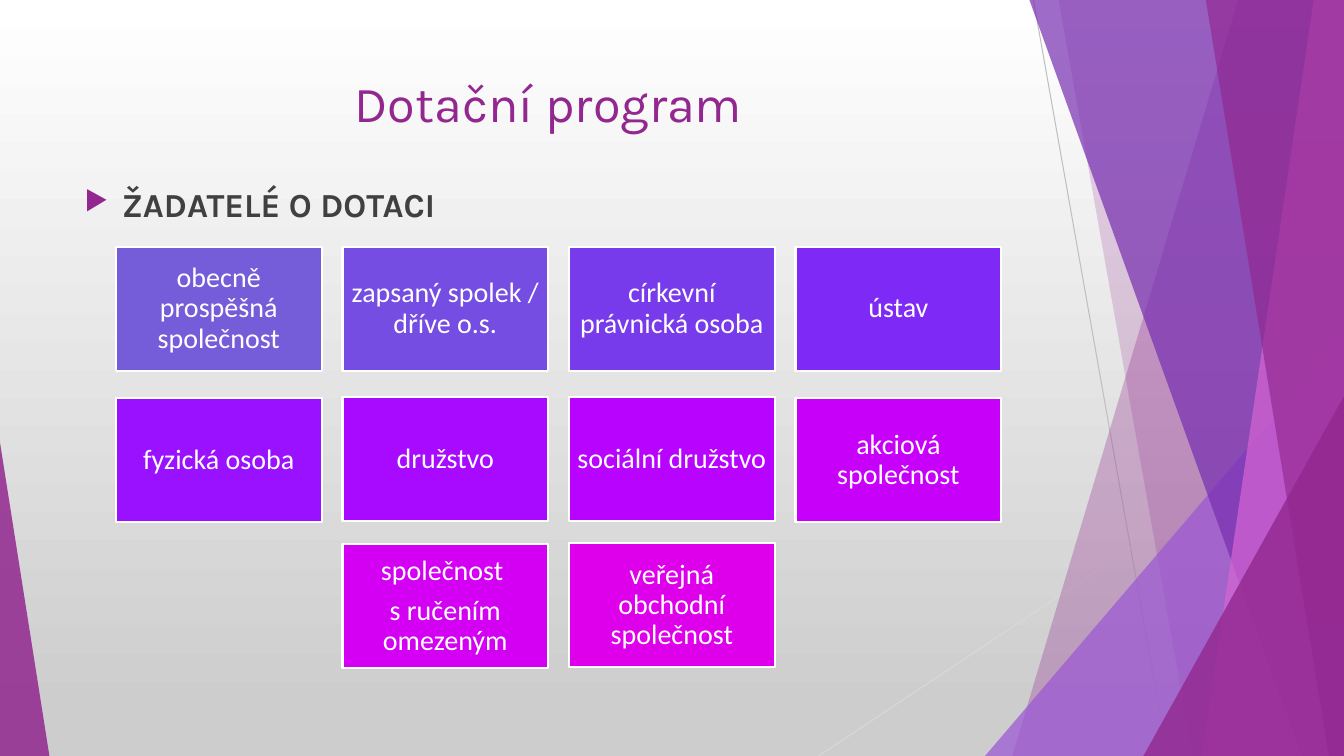
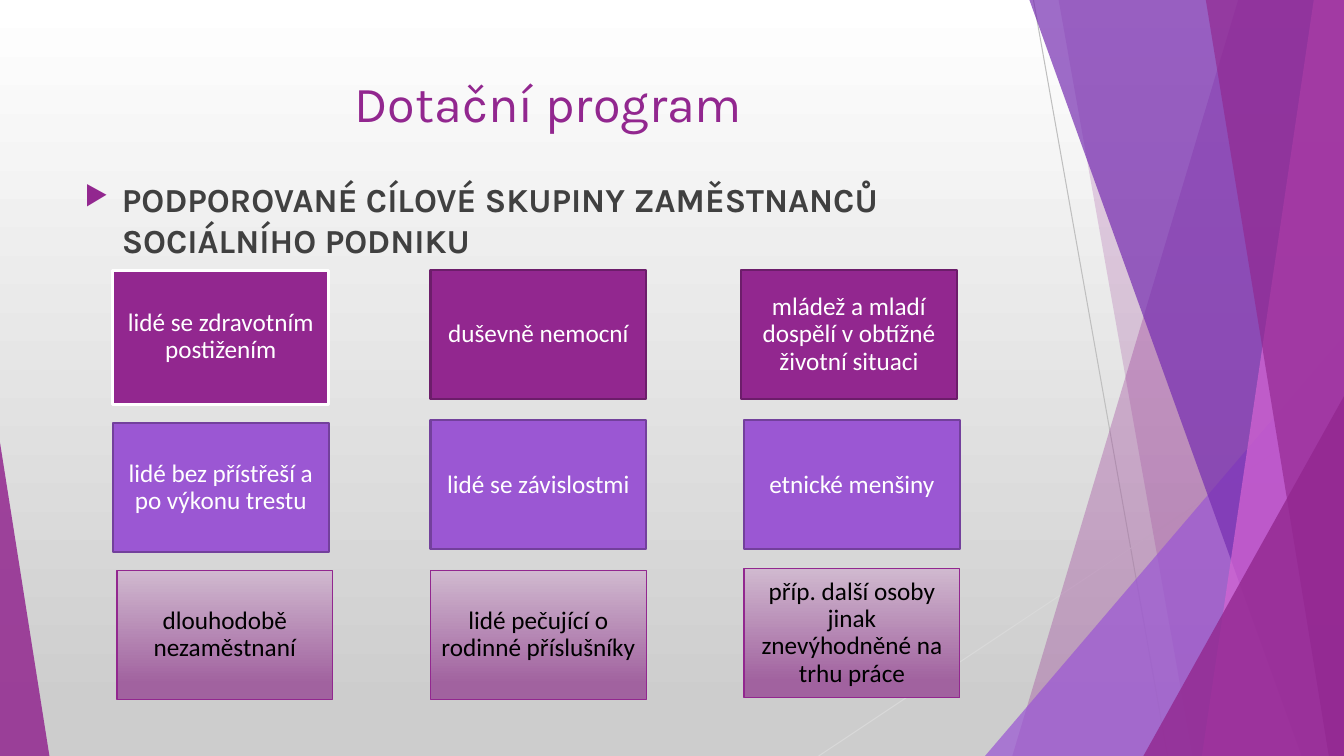
from lxml import etree
from pptx import Presentation
from pptx.dml.color import RGBColor
from pptx.enum.shapes import MSO_CONNECTOR, MSO_SHAPE
from pptx.enum.text import MSO_ANCHOR, PP_ALIGN
from pptx.oxml.ns import qn
from pptx.util import Inches, Pt

STRAIGHT = MSO_CONNECTOR.STRAIGHT
TRIANGLE = MSO_SHAPE.ISOSCELES_TRIANGLE
RECTANGLE = MSO_SHAPE.RECTANGLE
CENTER = PP_ALIGN.CENTER
MIDDLE = MSO_ANCHOR.MIDDLE

WIDTH, HEIGHT = 13.33, 7.5
TEXT_LEFT, TEXT_WIDTH = 0.74, 9.4
BULLET_INDENT = 0.37

PLUM, VIOLET, INDIGO, PINK = "92278F", "9B57D3", "762EB1", "D665D3"
DARK_PLUM, DARK_VIOLET = "6C1D6A", "73409C"
WHITE, BLACK, TEXT_GRAY = "FFFFFF", "000000", "404040"
PAGE_GRADIENT = ((0, WHITE), (0.94, "CDCDCD"))
BOX_GRADIENT = ((0, "D0B9CF"), (0.88, "A1629F"))

# Thin lines: start, end, colour
RAYS = [
    ((10.25, 0), (11.58, HEIGHT), "BFBFBF"),
    ((WIDTH, 4.03), (8.12, HEIGHT), "D9D9D9"),
]
# Bands run from a slanted left side to the right edge: top x, bottom x, bottom right x.
# Triangles: left, top, width, apex as a share of the width.
FACETS = [
    ("band", (12.28, 10.04, WIDTH), PLUM, 30),
    ("band", (10.5, 11.83, WIDTH), PLUM, 20),
    ("triangle", (9.77, 3.33, 3.56, 1), VIOLET, 72),
    ("band", (10.21, 12.91, WIDTH), INDIGO, 70),
    ("band", (13.03, 11.92, WIDTH), PINK, 70),
    ("band", (11.96, 13.18, WIDTH), PLUM, 65),
    ("triangle", (11.34, 3.93, 1.99, 1), PLUM, 80),
    ("triangle", (0, 4.39, 0.49, 0), PLUM, 85),
]

# Applicants: column, top, fill, paragraphs
APPLICANTS = [
    (0, 2.45, "755DD9", ["obecně prospěšná společnost"]),
    (1, 2.45, "754DE2", ["zapsaný spolek / dříve o.s."]),
    (2, 2.45, "783BEC", ["církevní právnická osoba"]),
    (3, 2.45, "7F29F6", ["ústav"]),
    (0, 3.95, "9911FF", ["fyzická osoba"]),
    (1, 3.94, "A80AFF", ["družstvo"]),
    (2, 3.94, "B803FF", ["sociální družstvo"]),
    (3, 3.95, "C700FA", ["akciová společnost"]),
    (1, 5.4, "D300F3", ["společnost ", "s ručením omezeným"]),
    (2, 5.39, "DE00EB", ["veřejná obchodní společnost"]),
]
APPLICANT_LEFT, APPLICANT_PITCH = 1.15, (7.89 - 1.15) / 3
applicant_boxes = [
    ((APPLICANT_LEFT + column * APPLICANT_PITCH, top, 2.04, 1.23),
     (fill, WHITE, 1.5, WHITE), lines)
    for column, top, fill, lines in APPLICANTS
]

# Box styles: fill, outline, outline width, text colour
FRAMED = (PLUM, WHITE, 2, WHITE)
FIRST_ROW = (PLUM, DARK_PLUM, 1.5, WHITE)
SECOND_ROW = (VIOLET, DARK_VIOLET, 1.5, WHITE)
THIRD_ROW = (BOX_GRADIENT, PLUM, 1, BLACK)
group_boxes = [
    ((1.12, 2.68, 2.14, 1.33), FRAMED, ["lidé se zdravotním postižením"]),
    ((4.27, 2.68, 2.14, 1.28), FIRST_ROW, ["duševně nemocní"]),
    ((7.35, 2.68, 2.14, 1.28), FIRST_ROW,
     ["mládež a mladí dospělí v obtížné životní situaci"]),
    ((1.12, 4.2, 2.14, 1.28), SECOND_ROW, ["lidé bez přístřeší a po výkonu trestu"]),
    ((4.27, 4.17, 2.14, 1.28), SECOND_ROW, ["lidé se závislostmi"]),
    ((7.38, 4.17, 2.14, 1.28), SECOND_ROW, ["etnické menšiny"]),
    ((1.16, 5.66, 2.14, 1.28), THIRD_ROW, ["dlouhodobě nezaměstnaní"]),
    ((4.27, 5.66, 2.14, 1.28), THIRD_ROW, ["lidé pečující o rodinné příslušníky"]),
    ((7.38, 5.64, 2.14, 1.28), THIRD_ROW,
     ["příp. další osoby jinak znevýhodněné na trhu práce"]),
]

# Slides: heading, heading top, boxes, box text size, box inset
SLIDES = [
    ("ŽADATELÉ O DOTACI", 1.78, applicant_boxes, 20, 0.08),
    ("PODPOROVANÉ CÍLOVÉ SKUPINY ZAMĚSTNANCŮ SOCIÁLNÍHO PODNIKU", 1.73,
     group_boxes, 18, 0.07),
]


def paint(fill, paint_color):
    """Fill with one hex colour, or top to bottom with (position, hex) stops."""
    if isinstance(paint_color, str):
        fill.solid()
        fill.fore_color.rgb = RGBColor.from_string(paint_color)
        return
    fill.gradient()
    fill.gradient_angle = 270
    for stop, (position, hex_color) in zip(fill.gradient_stops, paint_color):
        stop.position = position
        stop.color.rgb = RGBColor.from_string(hex_color)


def add_run(paragraph, text, font_name, size, hex_color, bold=False):
    run = paragraph.add_run()
    run.text = text
    run.font.name = font_name
    run.font.size = Pt(size)
    run.font.bold = bold
    paint(run.font.fill, hex_color)


presentation = Presentation()
presentation.slide_width = Inches(WIDTH)
presentation.slide_height = Inches(HEIGHT)
blank_layout = presentation.slide_layouts[6]

for heading, heading_top, boxes, text_size, inset in SLIDES:
    slide = presentation.slides.add_slide(blank_layout)
    shapes = slide.shapes
    paint(slide.background.fill, PAGE_GRADIENT)

    for start, end, hex_color in RAYS:
        ray = shapes.add_connector(STRAIGHT, *map(Inches, start + end))
        paint(ray.line.fill, hex_color)
        ray.line.width = Pt(0.75)
        etree.SubElement(ray.element.spPr, qn("a:effectLst"))

    for kind, geometry, hex_color, opacity in FACETS:
        if kind == "band":
            top_x, bottom_x, bottom_right = geometry
            corners = [(WIDTH, 0), (bottom_right, HEIGHT), (bottom_x, HEIGHT)]
            builder = shapes.build_freeform(Inches(top_x), 0)
            builder.add_line_segments([(Inches(x), Inches(y)) for x, y in corners])
            facet = builder.convert_to_shape()
        else:
            left, top, width, apex = geometry
            facet = shapes.add_shape(
                TRIANGLE, *map(Inches, (left, top, width, HEIGHT - top)))
            facet.adjustments[0] = apex
        facet.shadow.inherit = False
        facet.line.fill.background()
        paint(facet.fill, hex_color)
        facet_color = facet.element.spPr.find(qn("a:solidFill"))[0]
        etree.SubElement(facet_color, qn("a:alpha"), val=str(opacity * 1000))

    title = shapes.add_textbox(*map(Inches, (TEXT_LEFT, 0.67, TEXT_WIDTH, 1)))
    title.text_frame.word_wrap = True
    paragraph = title.text_frame.paragraphs[0]
    paragraph.alignment = CENTER
    add_run(paragraph, "Dotační program", "Karla", 36, PLUM)

    body = shapes.add_textbox(*map(Inches, (TEXT_LEFT, heading_top, TEXT_WIDTH, 0.9)))
    body.text_frame.word_wrap = True
    paragraph = body.text_frame.paragraphs[0]
    paragraph.space_before = Pt(10)
    add_run(paragraph, heading, "Karla", 24, TEXT_GRAY, bold=True)
    properties = paragraph._p.get_or_add_pPr()
    properties.set("marL", str(Inches(BULLET_INDENT)))
    properties.set("indent", str(-Inches(BULLET_INDENT)))
    bullet_color = etree.SubElement(properties, qn("a:buClr"))
    etree.SubElement(bullet_color, qn("a:srgbClr"), val=PLUM)
    etree.SubElement(properties, qn("a:buSzPct"), val="80000")
    etree.SubElement(properties, qn("a:buChar"), char="▶")

    for place, (fill, outline, outline_width, text_color), lines in boxes:
        box = shapes.add_shape(RECTANGLE, *map(Inches, place))
        box.shadow.inherit = False
        paint(box.fill, fill)
        paint(box.line.fill, outline)
        box.line.width = Pt(outline_width)
        frame = box.text_frame
        frame.word_wrap = True
        frame.vertical_anchor = MIDDLE
        frame.margin_left = frame.margin_right = Inches(inset)
        frame.margin_top = frame.margin_bottom = Inches(inset)
        for index, line in enumerate(lines):
            paragraph = frame.add_paragraph() if index else frame.paragraphs[0]
            paragraph.alignment = CENTER
            paragraph.line_spacing = 0.9
            paragraph.space_after = Pt(text_size * 0.35)
            add_run(paragraph, line, "Calibri", text_size, text_color)

presentation.save("out.pptx")
